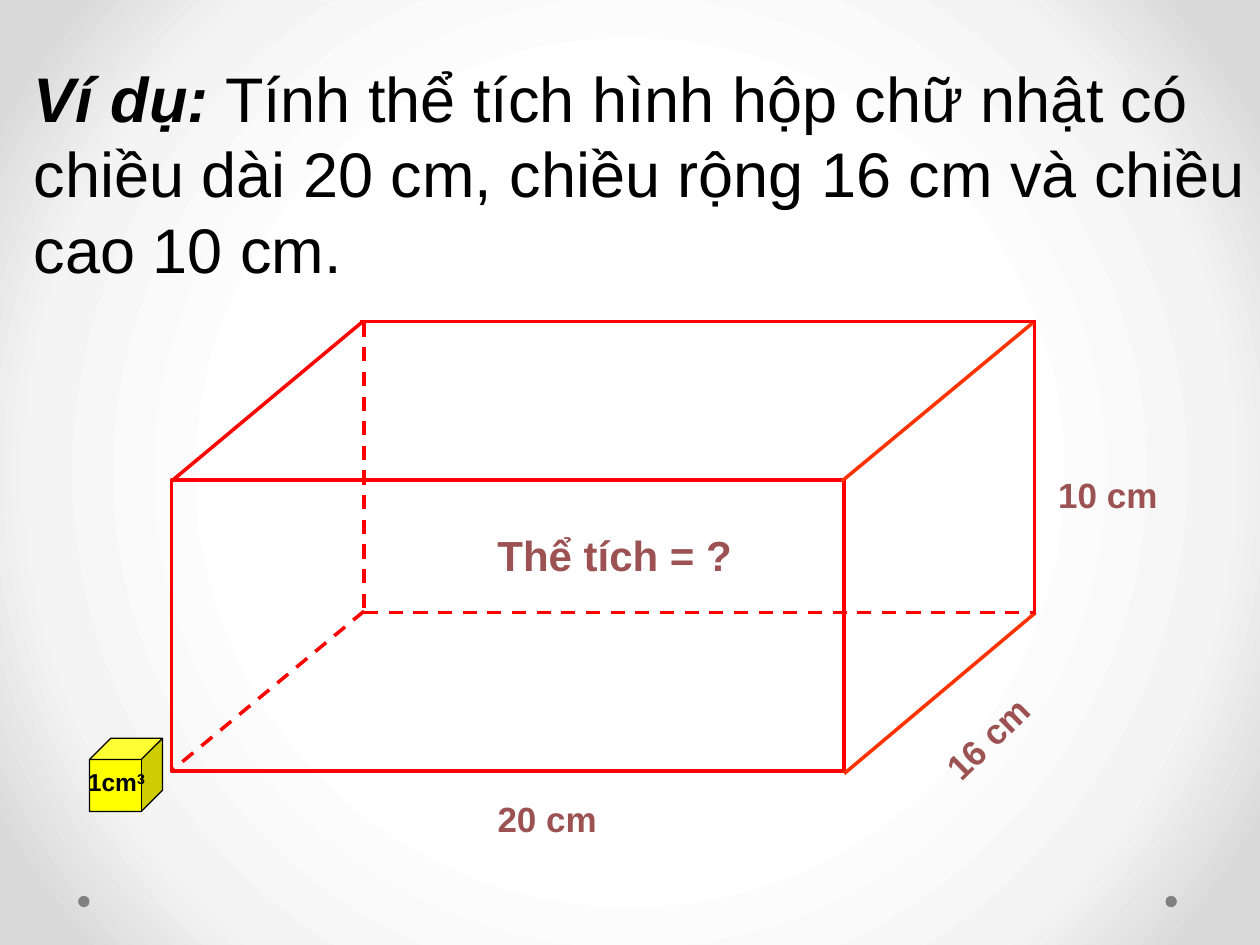
from pptx import Presentation
from pptx.dml.color import RGBColor
from pptx.enum.dml import MSO_LINE
from pptx.enum.shapes import MSO_CONNECTOR, MSO_SHAPE
from pptx.oxml import parse_xml
from pptx.oxml.ns import nsdecls, qn
from pptx.util import Inches, Pt

RED, ORANGE, BROWN, BLACK = "FF0000", "FF3300", "9C5252", "000000"


def color(hex_string):
    return RGBColor.from_string(hex_string)


def add_text(runs, left, top, width, height, size=20, font_color=BROWN,
             rotation=0, wrap=True):
    """Add a text box; runs is a list of (text, bold, italic, superscript)."""
    box = slide.shapes.add_textbox(Inches(left), Inches(top), Inches(width), Inches(height))
    box.rotation = rotation
    box.text_frame.word_wrap = wrap
    paragraph = box.text_frame.paragraphs[0]
    for text, bold, italic, superscript in runs:
        run = paragraph.add_run()
        run.text = text
        run.font.name = "Arial"
        run.font.size = Pt(size)
        run.font.bold = bold
        run.font.italic = italic
        run.font.color.rgb = color(font_color)
        if superscript:
            run.font._element.set("baseline", "30000")


presentation = Presentation()
presentation.slide_width = Inches(10)
presentation.slide_height = Inches(7.5)
slide = presentation.slides.add_slide(presentation.slide_layouts[6])

# Radial background
slide.background.fill.solid()
background = slide.background._cSld.find(qn("p:bg")).find(qn("p:bgPr"))
stops = "".join(
    f'<a:gs pos="{percent * 1000}"><a:srgbClr val="{shade}"/></a:gs>'
    for percent, shade in [(50, "FFFFFF"), (76, "F4F4F4"), (92, "DADADA")]
)
background.replace(background[0], parse_xml(
    f'<a:gradFill {nsdecls("a")} rotWithShape="1"><a:gsLst>{stops}</a:gsLst>'
    '<a:path path="circle"><a:fillToRect l="50000" t="50000" r="50000" b="50000"/>'
    '</a:path></a:gradFill>'
))

# Footer dots
for left in (9.25, 0.62):
    dot = slide.shapes.add_shape(
        MSO_SHAPE.OVAL, Inches(left), Inches(7.11), Inches(0.09), Inches(0.09))
    dot.shadow.inherit = False
    dot.fill.solid()
    dot.fill.fore_color.rgb = color("808080")
    dot.line.fill.background()

# Problem statement
add_text(
    [("Ví dụ:", True, True, False),
     (" Tính thể tích hình hộp chữ nhật có chiều dài 20 cm, chiều rộng 16 cm "
      "và chiều cao 10 cm.", False, False, False)],
    0.17, 0.42, 10, 1.92, size=36, font_color=BLACK)

# Box: front face, then the remaining edges
front_face = slide.shapes.add_shape(
    MSO_SHAPE.RECTANGLE, Inches(1.36), Inches(3.81), Inches(5.34), Inches(2.31))
front_face.shadow.inherit = False
front_face.fill.background()
front_face.line.color.rgb = color(RED)
front_face.line.width = Pt(2)

edges = [
    (8.21, 2.54, 8.21, 4.88, RED, False),
    (6.68, 3.82, 8.2, 2.56, ORANGE, False),
    (6.7, 6.14, 8.21, 4.87, ORANGE, False),
    (2.87, 2.56, 1.36, 3.82, RED, False),
    (2.86, 2.55, 8.2, 2.55, RED, False),
    (2.89, 2.56, 2.89, 4.83, RED, True),
    (2.89, 4.86, 8.22, 4.86, RED, True),
    (2.89, 4.85, 1.37, 6.11, RED, True),
]
for start_x, start_y, end_x, end_y, edge_color, hidden in edges:
    edge = slide.shapes.add_connector(
        MSO_CONNECTOR.STRAIGHT, Inches(start_x), Inches(start_y), Inches(end_x), Inches(end_y))
    edge.line.color.rgb = color(edge_color)
    edge.line.width = Pt(2)
    if hidden:
        edge.line.dash_style = MSO_LINE.DASH
    edge._element.spPr.append(parse_xml(f'<a:effectLst {nsdecls("a")}/>'))

# Dimensions
add_text([("20 cm", True, False, False)], 3.85, 6.28, 1.25, 0.43)
add_text([("16 cm", True, False, False)], 7.34, 5.64, 0.99, 0.43, rotation=315.6, wrap=False)
add_text([("10 cm", True, False, False)], 8.3, 3.71, 1.25, 0.43)

# Unit cube
cube = slide.shapes.add_shape(
    MSO_SHAPE.CUBE, Inches(0.71), Inches(5.86), Inches(0.58), Inches(0.58))
cube.adjustments[0] = 0.29
cube.shadow.inherit = False
cube.fill.solid()
cube.fill.fore_color.rgb = color("FFFF00")
cube.line.color.rgb = color(BLACK)
cube.line.width = Pt(0.75)
add_text([("1cm", True, False, False), ("3", True, False, True)],
         0.6, 6.04, 0.83, 0.33, size=14, font_color=BLACK)

add_text([("Thể tích = ?", True, False, False)], 3.85, 4.15, 2.63, 0.51, size=24)

presentation.save("out.pptx")
